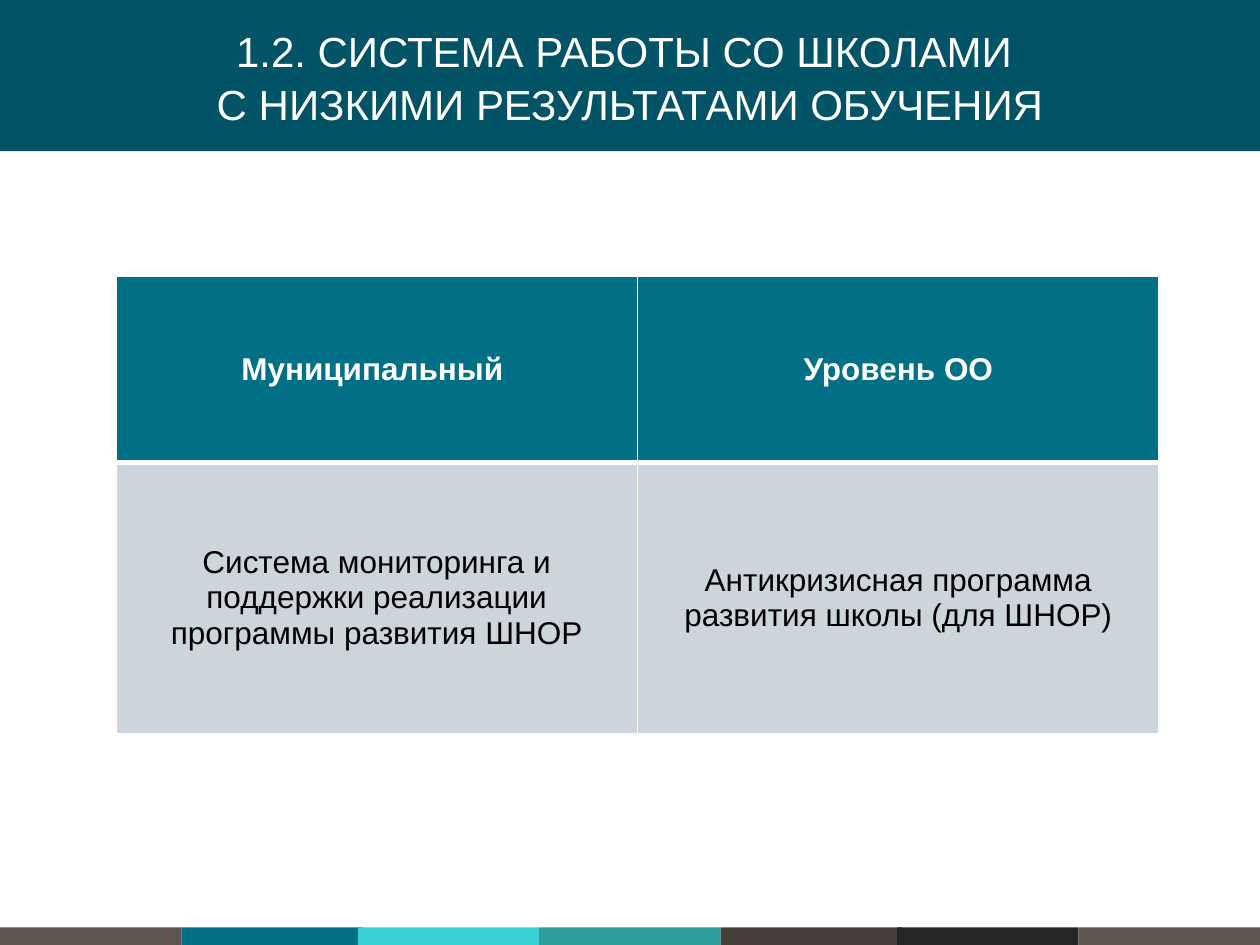
from lxml import etree
from pptx import Presentation
from pptx.dml.color import RGBColor
from pptx.enum.shapes import MSO_SHAPE
from pptx.enum.text import MSO_ANCHOR, PP_ALIGN
from pptx.oxml.ns import qn
from pptx.util import Inches, Pt

# Content
TITLE = "1.2. СИСТЕМА РАБОТЫ СО ШКОЛАМИ \vС НИЗКИМИ РЕЗУЛЬТАТАМИ ОБУЧЕНИЯ"
ROWS = [
    ["Муниципальный ", "Уровень ОО"],
    ["Система мониторинга и поддержки реализации программы развития ШНОР",
     "Антикризисная программа развития школы (для ШНОР)"],
]
# One entry per row: height, fill, text colour, bold, bottom border width
ROW_STYLES = [
    (1.48, "016F86", "FFFFFF", True, 3),
    (2.15, "CCD5D9", "000000", False, 1),
]
STRIPES = [
    (0, "5F5551"), (1.44, "016F86"), (2.84, "39D0D6"), (4.28, "2D9C9C"),
    (5.72, "473F3C"), (7.12, "262626"), (8.56, "5F5551"),
]
STRIPE_WIDTH, STRIPE_HEIGHT = 1.44, 0.14
PAGE_WIDTH, PAGE_HEIGHT = 10, 7.5
TABLE_LEFT, TABLE_TOP, COLUMN_WIDTH = 0.92, 2.19, 4.14


def rgb(value):
    return RGBColor.from_string(value)


def add_bar(page, left, top, width, height, color):
    bar = page.shapes.add_shape(MSO_SHAPE.RECTANGLE, Inches(left), Inches(top),
                                Inches(width), Inches(height))
    bar.shadow.inherit = False
    bar.fill.solid()
    bar.fill.fore_color.rgb = rgb(color)
    bar.line.fill.background()
    return bar


def write(frame, text, size, color, bold=False):
    frame.text = text
    frame.word_wrap = True
    paragraph = frame.paragraphs[0]
    paragraph.alignment = PP_ALIGN.CENTER
    for span in paragraph.runs:
        span.font.name = "Arial"
        span.font.size = Pt(size)
        span.font.bold = bold
        span.font.color.rgb = rgb(color)
    return paragraph


def set_border(properties, index, side, points):
    """Insert a white border before the cell fill, as the schema requires."""
    line = etree.Element(qn(f"a:{side}"), w=str(Pt(points)))
    fill = etree.SubElement(line, qn("a:solidFill"))
    etree.SubElement(fill, qn("a:srgbClr"), val="FFFFFF")
    properties.insert(index, line)


deck = Presentation()
deck.slide_width, deck.slide_height = Inches(PAGE_WIDTH), Inches(PAGE_HEIGHT)
page = deck.slides.add_slide(deck.slide_layouts[6])

# Footer stripes
for left, color in STRIPES:
    add_bar(page, left, PAGE_HEIGHT - STRIPE_HEIGHT, STRIPE_WIDTH, STRIPE_HEIGHT, color)

# Title band
band = add_bar(page, 0, 0, PAGE_WIDTH, 1.2, "015365")
band.text_frame.vertical_anchor = MSO_ANCHOR.MIDDLE
write(band.text_frame, TITLE, 24, "FFFFFF").line_spacing = 1.05

# Table of levels
table = page.shapes.add_table(
    len(ROWS), len(ROWS[0]), Inches(TABLE_LEFT), Inches(TABLE_TOP),
    Inches(COLUMN_WIDTH * len(ROWS[0])),
    Inches(sum(style[0] for style in ROW_STYLES))).table
for column in table.columns:
    column.width = Inches(COLUMN_WIDTH)
for row, texts, style in zip(table.rows, ROWS, ROW_STYLES):
    height, fill, color, bold, bottom = style
    row.height = Inches(height)
    top = 1 if row is table.rows[0] or bold else ROW_STYLES[0][-1]
    for cell, text in zip(row.cells, texts):
        cell.fill.solid()
        cell.fill.fore_color.rgb = rgb(fill)
        cell.vertical_anchor = MSO_ANCHOR.MIDDLE
        write(cell.text_frame, text, 18, color, bold)
        properties = cell._tc.get_or_add_tcPr()
        borders = {"lnL": 1, "lnR": 1, "lnT": top, "lnB": bottom}
        for index, (side, points) in enumerate(borders.items()):
            set_border(properties, index, side, points)

deck.save("out.pptx")
